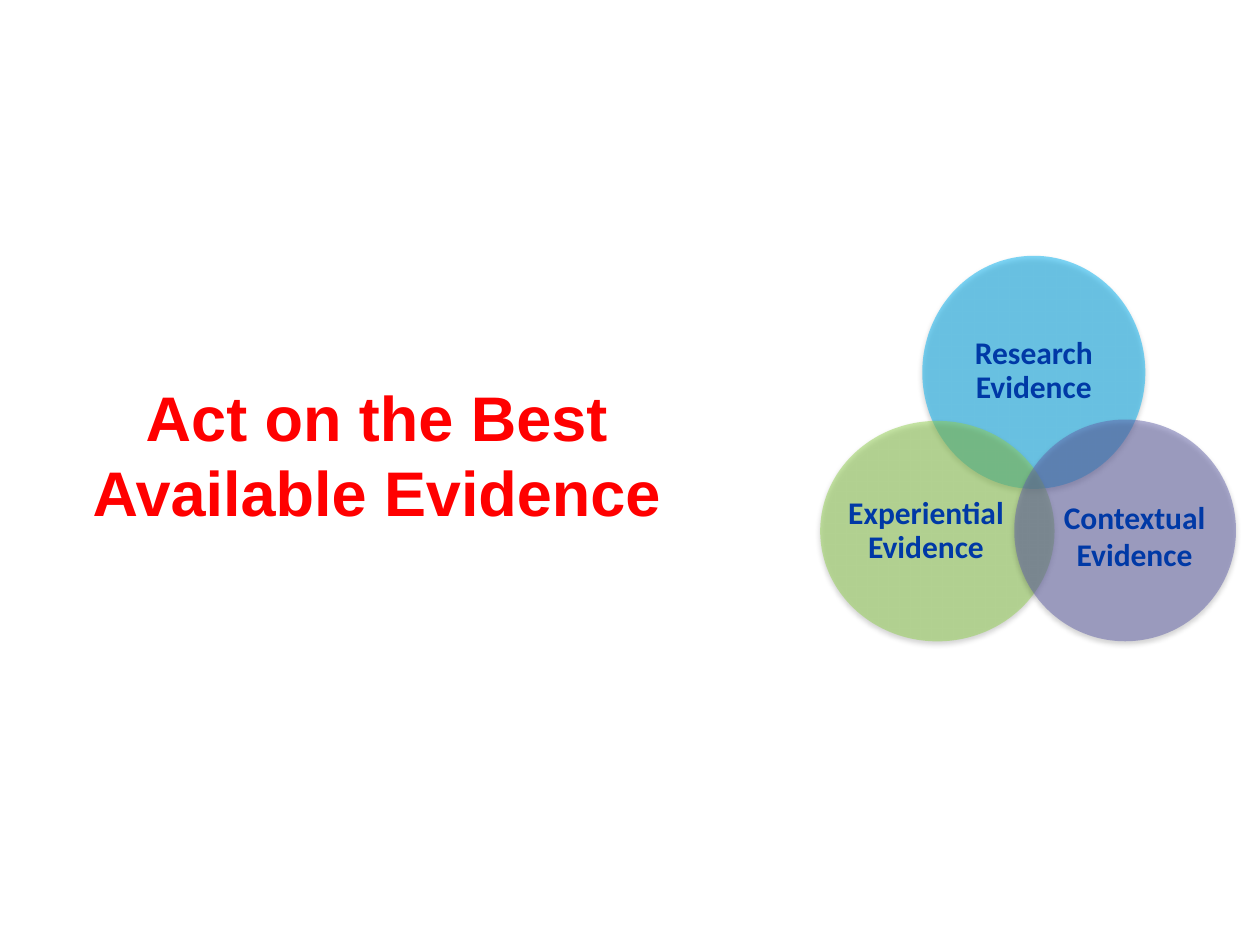
from lxml import etree
from pptx import Presentation
from pptx.dml.color import RGBColor
from pptx.enum import shapes, text
from pptx.oxml import parse_xml
from pptx.oxml.ns import nsdecls, qn
from pptx.util import Inches, Pt


def color(hex_value):
    return RGBColor.from_string(hex_value)


def write_centered(frame, wording, font_name, size, hex_value):
    """Fill a text frame with one bold, centred, wrapped paragraph."""
    frame.word_wrap = True
    frame.auto_size = text.MSO_AUTO_SIZE.NONE
    frame.vertical_anchor = text.MSO_ANCHOR.TOP
    paragraph = frame.paragraphs[0]
    paragraph.alignment = text.PP_ALIGN.CENTER
    run = paragraph.add_run()
    run.text = wording
    run.font.name = font_name
    run.font.size = Pt(size)
    run.font.bold = True
    run.font.color.rgb = color(hex_value)
    return paragraph


presentation = Presentation()
presentation.slide_width = Inches(10)
presentation.slide_height = Inches(7.5)
slide = presentation.slides.add_slide(presentation.slide_layouts[5])

title = slide.shapes.title
title.left, title.top = Inches(0.52), Inches(2.95)
title.width, title.height = Inches(4.94), Inches(1.35)
write_centered(title.text_frame, "Act on the Best Available Evidence", "Arial", 36, "FF0000")

# Overlapping circles: left, top, width, height, fill
circles = [
    (7.32, 2.03, 1.77, 1.85, "00B0F0"),
    (6.51, 3.34, 1.86, 1.75, "92D050"),
    (8.05, 3.33, 1.76, 1.76, "6363A9"),
]
for left, top, width, height, fill in circles:
    circle = slide.shapes.add_shape(
        shapes.MSO_SHAPE.OVAL, Inches(left), Inches(top), Inches(width), Inches(height))
    circle.fill.solid()
    circle.fill.fore_color.rgb = color(fill)
    circle.line.fill.background()
    fill_color = circle.fill._xPr.find(qn("a:solidFill"))[0]
    etree.SubElement(fill_color, qn("a:alpha"), val="50000")
    circle.shadow.inherit = False
    effects = circle._element.spPr.find(qn("a:effectLst"))
    effects.append(parse_xml(
        f'<a:outerShdw {nsdecls("a")} blurRad="{Pt(3.1)}" dist="{Pt(1.8)}" dir="5400000" '
        'rotWithShape="0"><a:srgbClr val="000000"><a:alpha val="35000"/></a:srgbClr>'
        '</a:outerShdw>'))

# Circle labels: wording, left, top, width, height, line spacing
labels = [
    ("Research Evidence", 7.15, 2.63, 2.11, 0.65, 0.9),
    ("Experiential Evidence", 6.28, 3.9, 2.14, 0.65, 0.9),
    ("Contextual Evidence", 7.97, 3.9, 2.07, 0.71, 1.0),
]
for wording, left, top, width, height, spacing in labels:
    label = slide.shapes.add_textbox(Inches(left), Inches(top), Inches(width), Inches(height))
    frame = label.text_frame
    frame.margin_left = frame.margin_right = Inches(0.2)
    paragraph = write_centered(frame, wording, "Calibri", 18, "0039A6")
    paragraph.line_spacing = spacing

presentation.save("out.pptx")
